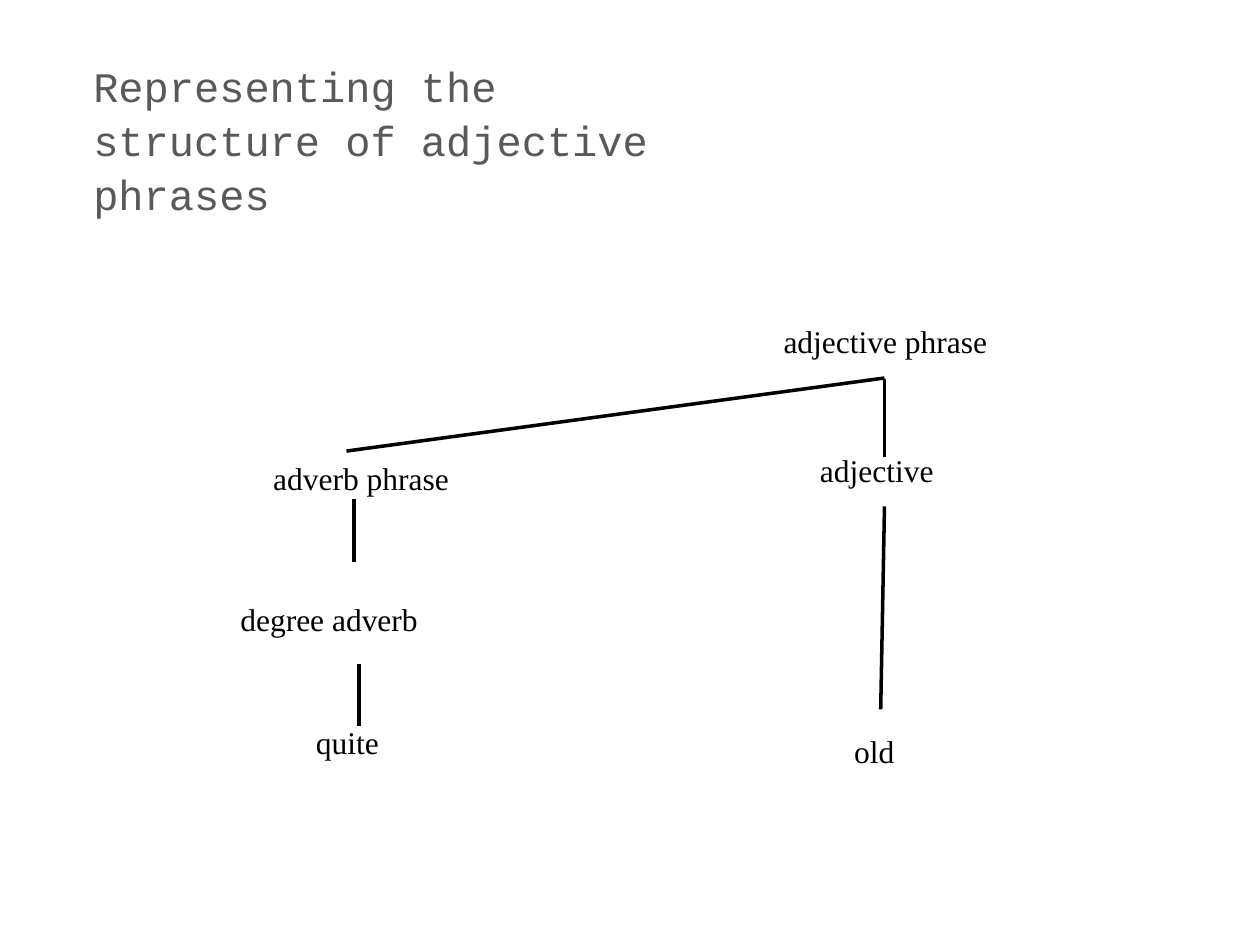
from lxml import etree
from pptx import Presentation
from pptx.dml.color import RGBColor
from pptx.enum.shapes import MSO_CONNECTOR
from pptx.enum.text import MSO_ANCHOR, MSO_AUTO_SIZE, PP_ALIGN
from pptx.oxml.ns import qn
from pptx.util import Inches, Pt

STRAIGHT = MSO_CONNECTOR.STRAIGHT
TOP = MSO_ANCHOR.TOP
NO_AUTOFIT = MSO_AUTO_SIZE.NONE
LEFT = PP_ALIGN.LEFT

BLACK = RGBColor(0x00, 0x00, 0x00)
GREY = RGBColor(0x59, 0x59, 0x59)
TITLE_FONT = "Courier New"
TREE_FONT = "Times New Roman"
TITLE_ONLY = 5
LABEL_HEIGHT = 0.5

# Label, then left, top and width in inches from the corner of the tree
NODES = [
    ("adjective phrase", 4.32, 0.01, 2.35),
    ("adverb phrase", 0.27, 1.09, 2.06),
    ("adjective", 4.61, 1.03, 1.4),
    ("degree adverb", 0.01, 2.21, 2.07),
    ("quite", 0.61, 3.19, 0.86),
    ("old", 4.88, 3.26, 0.62),
]

# Start x, y and end x, y in inches from the corner of the tree
BRANCHES = [
    (5.22, 0.5, 0.95, 1.08),
    (5.22, 0.51, 5.22, 1.13),
    (5.22, 1.52, 5.19, 3.13),
    (1.01, 1.46, 1.01, 1.96),
    (1.05, 2.77, 1.05, 3.26),
]


def set_font(p, name, size, color):
    p.font.name = name
    p.font.size = Pt(size)
    p.font.color.rgb = color


def add_title(slide, text, left, top, width, height):
    title = slide.shapes.title
    title.left, title.top = Inches(left), Inches(top)
    title.width, title.height = Inches(width), Inches(height)
    tf = title.text_frame
    tf.text = text
    tf.word_wrap = True
    tf.auto_size = NO_AUTOFIT
    tf.vertical_anchor = TOP
    p = tf.paragraphs[0]
    p.alignment = LEFT
    p.line_spacing = 1.07
    set_font(p, TITLE_FONT, 24, GREY)


def add_node(shapes, text, left, top, width):
    box = shapes.add_textbox(Inches(left), Inches(top),
                             Inches(width), Inches(LABEL_HEIGHT))
    tf = box.text_frame
    tf.word_wrap = True
    tf.text = text
    set_font(tf.paragraphs[0], TREE_FONT, 18, BLACK)


def add_branch(shapes, x1, y1, x2, y2):
    line = shapes.add_connector(STRAIGHT, Inches(x1), Inches(y1),
                                Inches(x2), Inches(y2))
    line.line.color.rgb = BLACK
    line.line.width = Pt(2)
    etree.SubElement(line._element.spPr, qn("a:effectLst"))


def add_tree(slide, left, top):
    """Group the labels and branches of the phrase structure."""
    shapes = slide.shapes.add_group_shape().shapes
    for x1, y1, x2, y2 in BRANCHES:
        add_branch(shapes, left + x1, top + y1, left + x2, top + y2)
    for text, x, y, width in NODES:
        add_node(shapes, text, left + x, top + y, width)


def main():
    prs = Presentation()
    prs.slide_width, prs.slide_height = Inches(10), Inches(7.5)
    slide = prs.slides.add_slide(prs.slide_layouts[TITLE_ONLY])
    add_title(slide, "Representing the structure of adjective phrases",
              0.64, 0.4, 5, 0.91)
    add_tree(slide, 1.8, 2.5)
    prs.save("out.pptx")


if __name__ == "__main__":
    main()
